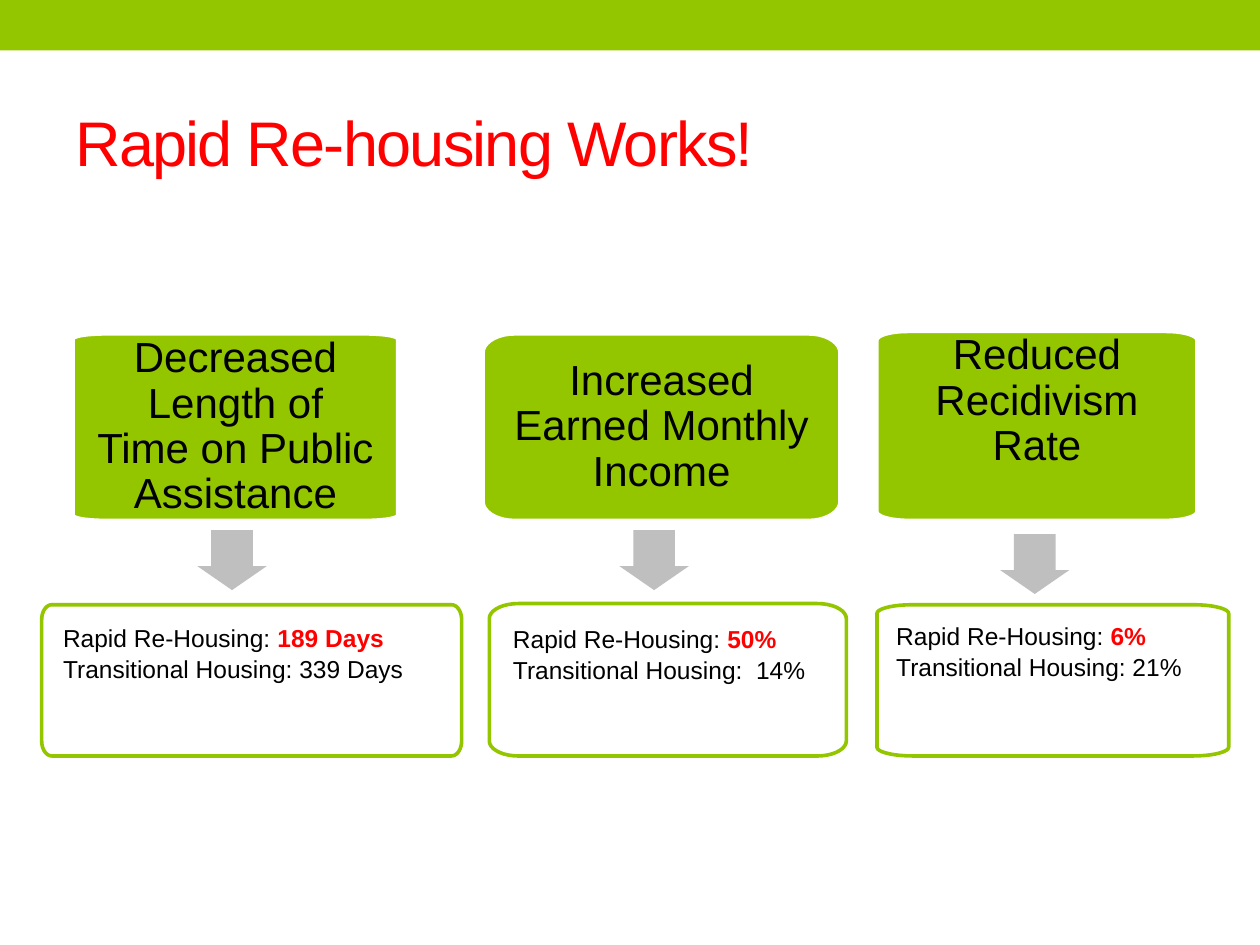
import math
from typing import NamedTuple

import pptx
import pptx.dml.color
import pptx.enum.shapes
import pptx.enum.text
import pptx.util
from lxml import etree
from pptx.oxml.ns import qn

Pt = pptx.util.Pt
RGBColor = pptx.dml.color.RGBColor
Align = pptx.enum.text.PP_ALIGN
Anchor = pptx.enum.text.MSO_ANCHOR
Shape = pptx.enum.shapes.MSO_SHAPE

GREEN = RGBColor(0x94, 0xC6, 0x00)
RED = RGBColor(0xFF, 0x00, 0x00)
BLACK = RGBColor(0x00, 0x00, 0x00)
WHITE = RGBColor(0xFF, 0xFF, 0xFF)
GRAY = RGBColor(0xBF, 0xBF, 0xBF)
FONT = "Arial"
ARROW_W, ARROW_H = 39.6, 34.2


class Box(NamedTuple):
    x: float
    y: float
    w: float
    h: float
    rx: float  # horizontal corner radius
    ry: float  # vertical corner radius


class Outcome(NamedTuple):
    heading: str
    header: Box
    header_bottom: float  # bottom text inset
    arrow_x: float  # centre
    arrow_y: float
    result: Box
    inset: float
    rapid: str
    transitional: str


OUTCOMES = [
    Outcome("Decreased Length of Time on Public Assistance",
            Box(41.8, 190.8, 185.4, 106.6, 18.7, 2.9), 0, 132.6, 303,
            Box(23.8, 345.6, 240, 86.4, 5.8, 8.6), 12.2,
            "189 Days", "Transitional Housing: 339 Days"),
    Outcome("Increased Earned Monthly Income",
            Box(276, 190.8, 204, 106.6, 18, 10.8), 0, 373.8, 303,
            Box(279.6, 344.9, 204, 87.1, 16.6, 8.6), 13.5,
            "50%", "Transitional Housing:  14%"),
    Outcome("Reduced Recidivism Rate",
            Box(501.1, 189.4, 182.9, 108, 18, 5), 28, 591.3, 305.2,
            Box(501.1, 345.6, 201, 86.4, 20.2, 5), 11,
            "6%", "Transitional Housing: 21%"),
]


def add_rounded(s, box: Box, fill: RGBColor, line: RGBColor):
    """Draw a rectangle with elliptical corners."""
    corners = [  # centre of each corner and its starting angle
        (box.x + box.rx, box.y + box.ry, 180),
        (box.x + box.w - box.rx, box.y + box.ry, 270),
        (box.x + box.w - box.rx, box.y + box.h - box.ry, 0),
        (box.x + box.rx, box.y + box.h - box.ry, 90),
    ]
    points = [(Pt(cx + box.rx * math.cos(math.radians(start + step))),
               Pt(cy + box.ry * math.sin(math.radians(start + step))))
              for cx, cy, start in corners for step in range(0, 91, 10)]
    fb = s.shapes.build_freeform(*points[0])
    fb.add_line_segments(points[1:], close=True)
    sp = fb.convert_to_shape()
    sp.shadow.inherit = False
    sp.fill.solid()
    sp.fill.fore_color.rgb = fill
    sp.line.color.rgb = line
    sp.line.width = Pt(2.08)
    return sp


def add_preset(s, kind: Shape, x: float, y: float, w: float, h: float,
               fill: RGBColor):
    sp = s.shapes.add_shape(kind, Pt(x), Pt(y), Pt(w), Pt(h))
    sp.shadow.inherit = False
    sp.fill.solid()
    sp.fill.fore_color.rgb = fill
    sp.line.fill.background()
    return sp


def set_frame(tf, anchor: Anchor, left: float, top: float, right: float,
              bottom: float) -> None:
    tf.word_wrap = True
    tf.vertical_anchor = anchor
    tf.margin_left, tf.margin_top = Pt(left), Pt(top)
    tf.margin_right, tf.margin_bottom = Pt(right), Pt(bottom)


def style(p, size: float, color: RGBColor, align: Align = Align.LEFT) -> None:
    p.alignment = align
    p.font.name = FONT
    p.font.size = Pt(size)
    p.font.color.rgb = color


def add_title(s, text: str) -> None:
    tb = s.shapes.add_textbox(Pt(36), Pt(42), Pt(648), Pt(78))
    tf = tb.text_frame
    set_frame(tf, Anchor.MIDDLE, 7.2, 3.6, 7.2, 3.6)
    p = tf.paragraphs[0]
    r = p.add_run()
    r.text = text
    style(p, 36, RED)
    r.font._element.set("spc", "-100")


def add_outcome(s, o: Outcome) -> None:
    # Heading
    sp = add_rounded(s, o.header, GREEN, WHITE)
    tf = sp.text_frame
    set_frame(tf, Anchor.MIDDLE, 13.5, 0, 13.5, o.header_bottom)
    p = tf.paragraphs[0]
    p.text = o.heading
    p.line_spacing = 0.9
    style(p, 24, BLACK, Align.CENTER)

    # Arrow
    sp = add_preset(s, Shape.DOWN_ARROW, o.arrow_x - ARROW_W / 2, o.arrow_y,
                    ARROW_W, ARROW_H, GRAY)
    sp.adjustments[0] = 0.6
    sp.adjustments[1] = 0.4

    # Results on a slightly transparent panel
    sp = add_rounded(s, o.result, WHITE, GREEN)
    color = sp._element.spPr.find(qn("a:solidFill"))[0]
    etree.SubElement(color, qn("a:alpha")).set("val", "90000")
    tf = sp.text_frame
    set_frame(tf, Anchor.TOP, *[o.inset] * 4)
    p = tf.paragraphs[0]
    p.add_run().text = "Rapid Re-Housing: "
    r = p.add_run()
    r.text = o.rapid
    r.font.bold = True
    r.font.color.rgb = RED
    tf.add_paragraph().text = o.transitional
    for p in tf.paragraphs:
        p.line_spacing = 0.9
        p.space_after = Pt(2.5)
        style(p, 14, BLACK)


def main() -> None:
    prs = pptx.Presentation()
    prs.slide_width, prs.slide_height = Pt(720), Pt(540)
    s = prs.slides.add_slide(prs.slide_layouts[6])
    add_preset(s, Shape.RECTANGLE, 0, 0, 720, 28.8, GREEN)
    add_title(s, "Rapid Re-housing Works!")
    for outcome in OUTCOMES:
        add_outcome(s, outcome)
    prs.save("out.pptx")


if __name__ == "__main__":
    main()
